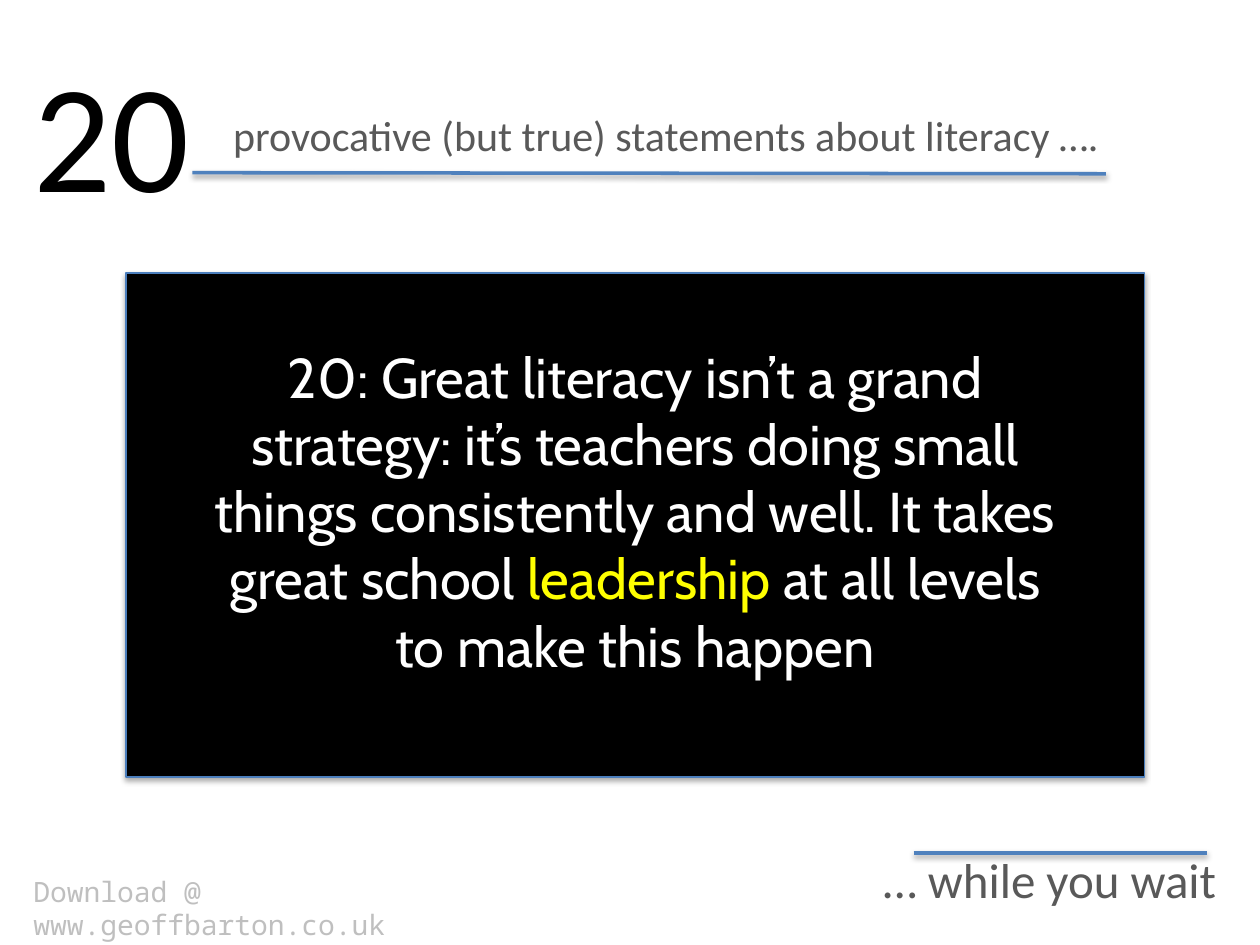
from pptx import Presentation
from pptx.dml.color import RGBColor
from pptx.enum.shapes import MSO_CONNECTOR, MSO_SHAPE
from pptx.enum.text import MSO_ANCHOR, PP_ALIGN
from pptx.util import Pt

GREY = {"size": 24, "name": "Calibri", "color": "595959"}
NUMBER = {"size": 88, "name": "Calibri", "color": "000000"}
QUOTE = {"size": 32, "name": "Cabin", "color": "FFFFFF"}
DOWNLOAD = {"size": 16, "name": "Noto Sans Mono", "color": "BFBFBF"}


def rgb(value):
    return RGBColor.from_string(value)


def write(holder, box, runs, align=PP_ALIGN.LEFT, anchor=MSO_ANCHOR.TOP):
    for side, length in zip(("left", "top", "width", "height"), box):
        setattr(holder, side, Pt(length))
    frame = holder.text_frame
    frame.word_wrap = True
    frame.vertical_anchor = anchor
    paragraph = frame.paragraphs[0]
    paragraph.alignment = align
    for words, style in runs:
        run = paragraph.add_run()
        run.text = words
        for attribute, value in style.items():
            if attribute == "color":
                run.font.color.rgb = rgb(value)
            else:
                setattr(run.font, attribute, Pt(value) if attribute == "size" else value)


def add_text(slide, box, runs, **layout):
    write(slide.shapes.add_textbox(*map(Pt, box)), box, runs, **layout)


def add_rule(slide, *ends):
    rule = slide.shapes.add_connector(MSO_CONNECTOR.STRAIGHT, *map(Pt, ends))
    rule.line.color.rgb = rgb("4F81BD")
    rule.line.width = Pt(2)


def add_heading(slide, left, top, width, height):
    write(slide.shapes.title, (left + 114, top, width - 114, height),
          [("provocative (but true) statements about literacy ….", GREY)],
          anchor=MSO_ANCHOR.MIDDLE)
    add_text(slide, (left, top, 294, height - 2), [("20", NUMBER)])
    add_rule(slide, left + 98, top + 80, left + 620, top + 80.6)


def add_statement(slide, left, top, width, height):
    panel = slide.shapes.add_shape(MSO_SHAPE.RECTANGLE, *map(Pt, (left, top, width, height)))
    panel.fill.solid()
    panel.fill.fore_color.rgb = rgb("000000")
    panel.line.color.rgb = rgb("4B7EBC")
    panel.line.width = Pt(0.75)
    add_text(slide, (left + 38, top + 36, width - 76, height - 90), [
        ("20: Great literacy isn’t a grand strategy: it’s teachers doing small things "
         "consistently and well. It takes great school ", QUOTE),
        ("leadership ", {**QUOTE, "color": "FFFF00"}),
        ("at all levels to make this happen", QUOTE),
    ], align=PP_ALIGN.CENTER)


def add_footer(slide, left, top, width, height):
    add_text(slide, (left + 78, top, width - 78, height),
             [("… while you wait", {**GREY, "size": 28})],
             align=PP_ALIGN.RIGHT, anchor=MSO_ANCHOR.MIDDLE)
    add_rule(slide, left + 510, top + 43.5, left + 678, top + 43.5)
    add_text(slide, (left, top + 52, 318, 27),
             [("Download @ www.geoffbarton.co.uk", DOWNLOAD)])


def main():
    deck = Presentation()
    deck.slide_width, deck.slide_height = Pt(720), Pt(540)
    slide = deck.slides.add_slide(deck.slide_layouts[5])
    add_statement(slide, 72, 156, 582, 288)
    add_heading(slide, 12, 18.7, 726, 116)
    add_footer(slide, 12, 444, 690, 116)
    deck.save("out.pptx")


if __name__ == "__main__":
    main()
